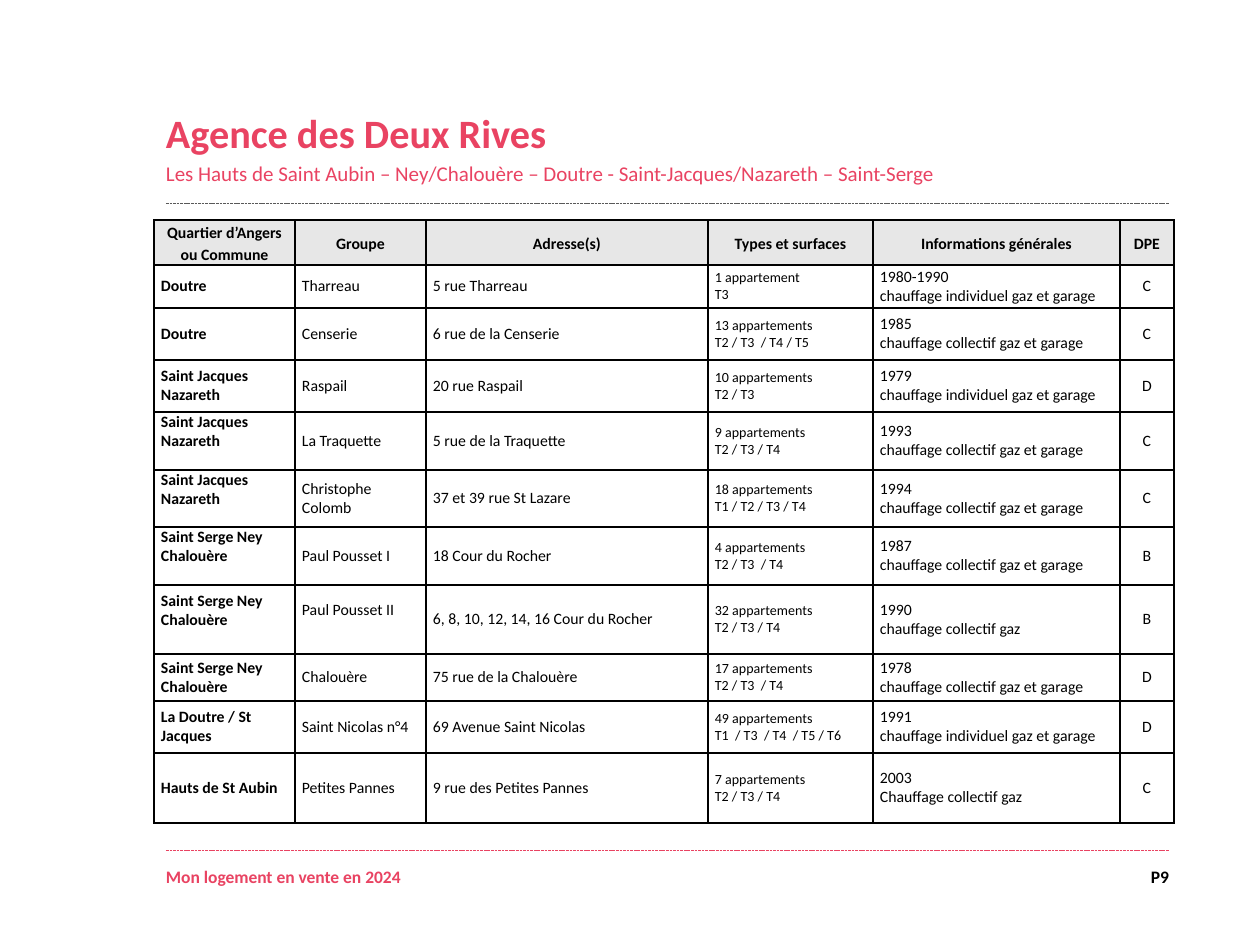
import dataclasses

import lxml.etree
import pptx
import pptx.dml.color
import pptx.enum.dml
import pptx.enum.text
import pptx.oxml.ns
import pptx.util

PX = 914400 // 126
ALIGN = pptx.enum.text.PP_ALIGN
ANCHOR = pptx.enum.text.MSO_ANCHOR


@dataclasses.dataclass(frozen=True)
class Theme:
    font: str = "Calibri"
    accent: str = "E94362"
    ink: str = "000000"
    rule: str = "595959"
    header_fill: str = "E7E7E7"
    title: int = 23
    subtitle: int = 12
    footer: int = 10
    cell: int = 9
    small: int = 8


THEME = Theme()
LEFT, RIGHT = 166, 1169
COLUMN_WIDTHS = [141, 131, 282, 165, 247, 54]
ROW_HEIGHTS = [45, 43, 52, 52, 58, 57, 58, 69, 47, 52, 70]
HEADER = ["Quartier d’Angers ou Commune", "Groupe", "Adresse(s)",
          "Types et surfaces", "Informations générales", "DPE"]
INDIVIDUAL = "chauffage individuel gaz et garage"
COLLECTIVE = "chauffage collectif gaz et garage"
HOMES = [
    ["Doutre", "Tharreau", "5 rue Tharreau",
     "1 appartement\nT3", f"1980-1990\n{INDIVIDUAL}", "C"],
    ["Doutre", "Censerie", "6 rue de la Censerie",
     "13 appartements\nT2 / T3  / T4 / T5", f"1985\n{COLLECTIVE}", "C"],
    ["Saint Jacques Nazareth", "Raspail", "20 rue Raspail",
     "10 appartements\nT2 / T3", f"1979\n{INDIVIDUAL}", "D"],
    ["Saint Jacques Nazareth", "La Traquette", "5 rue de la Traquette",
     "9 appartements\nT2 / T3 / T4", f"1993\n{COLLECTIVE}", "C"],
    ["Saint Jacques Nazareth", "Christophe Colomb", "37 et 39 rue St Lazare",
     "18 appartements\nT1 / T2 / T3 / T4", f"1994\n{COLLECTIVE}", "C"],
    ["Saint Serge Ney Chalouère", "Paul Pousset I", "18 Cour du Rocher",
     "4 appartements\nT2 / T3  / T4", f"1987\n{COLLECTIVE}", "B"],
    ["Saint Serge Ney Chalouère", "Paul Pousset II", "6, 8, 10, 12, 14, 16 Cour du Rocher",
     "32 appartements\nT2 / T3 / T4", "1990\nchauffage collectif gaz", "B"],
    ["Saint Serge Ney Chalouère", "Chalouère", "75 rue de la Chalouère",
     "17 appartements\nT2 / T3  / T4", f"1978\n{COLLECTIVE}", "D"],
    ["La Doutre / St Jacques", "Saint Nicolas n°4", "69 Avenue Saint Nicolas",
     "49 appartements\nT1  / T3  / T4  / T5 / T6", f"1991\n{INDIVIDUAL}", "D"],
    ["Hauts de St Aubin", "Petites Pannes", "9 rue des Petites Pannes",
     "7 appartements\nT2 / T3 / T4", "2003\nChauffage collectif gaz", "C"],
]
# Cells (row, column) whose text sits half a line above the middle.
RAISED = {(4, 0), (5, 0), (6, 0), (7, 0), (7, 1)}


def rgb(colour):
    return pptx.dml.color.RGBColor.from_string(colour)


class Page:
    def __init__(self, slide, theme):
        self.slide = slide
        self.theme = theme

    def style(self, para, size, colour, bold=False, align=ALIGN.LEFT):
        para.alignment = align
        para.font.name = self.theme.font
        para.font.size = pptx.util.Pt(size)
        para.font.bold = bold
        para.font.color.rgb = rgb(colour)

    def frame(self, box, anchor):
        """Give a box plain wrapping text without margins."""
        frame = box.text_frame
        frame.word_wrap = True
        frame.auto_size = pptx.enum.text.MSO_AUTO_SIZE.NONE
        frame.vertical_anchor = anchor
        frame.margin_left = frame.margin_right = 0
        frame.margin_top = frame.margin_bottom = 0
        return frame

    def heading(self, title, subtitle, left, top, width, height):
        box = self.slide.shapes.title
        box.left, box.top = left * PX, top * PX
        box.width, box.height = width * PX, height * PX
        frame = self.frame(box, ANCHOR.BOTTOM)
        frame.text = f"{title}\n{subtitle}"
        first, second = frame.paragraphs
        self.style(first, self.theme.title, self.theme.accent, bold=True)
        self.style(second, self.theme.subtitle, self.theme.accent)
        first.space_before = pptx.util.Pt(0)
        second.space_before = pptx.util.Pt(0.2 * self.theme.subtitle)

    def footer(self, text, left, width, colour, align):
        box = self.slide.shapes.add_textbox(left * PX, 866 * PX, width * PX, 25 * PX)
        frame = self.frame(box, ANCHOR.TOP)
        frame.text = text
        self.style(frame.paragraphs[0], self.theme.footer, colour, True, align)

    def rule(self, y, colour):
        line = self.slide.shapes.add_connector(
            pptx.enum.shapes.MSO_CONNECTOR.STRAIGHT, LEFT * PX, y * PX, RIGHT * PX, y * PX)
        line.line.color.rgb = rgb(colour)
        line.line.width = pptx.util.Pt(0.5)
        line.line.dash_style = pptx.enum.dml.MSO_LINE.SQUARE_DOT
        lxml.etree.SubElement(line._element.spPr, pptx.oxml.ns.qn("a:effectLst"))

    def borders(self, cell):
        properties = cell._tc.get_or_add_tcPr()
        for side in ("a:lnL", "a:lnR", "a:lnT", "a:lnB"):
            edge = lxml.etree.SubElement(
                properties, pptx.oxml.ns.qn(side), w=str(pptx.util.Pt(1)))
            fill = lxml.etree.SubElement(edge, pptx.oxml.ns.qn("a:solidFill"))
            lxml.etree.SubElement(fill, pptx.oxml.ns.qn("a:srgbClr"), val=self.theme.ink)

    def cell(self, cell, text, row, column):
        header = row == 0
        self.borders(cell)
        if header:
            cell.fill.solid()
            cell.fill.fore_color.rgb = rgb(self.theme.header_fill)
        else:
            cell.fill.background()
        cell.vertical_anchor = ANCHOR.MIDDLE
        cell.margin_left = cell.margin_right = 7 * PX
        cell.margin_top = 0
        cell.margin_bottom = 18 * PX if (row, column) in RAISED else 0
        cell.text = text
        small = column == 3 and not header
        centred = header or column == 5
        for para in cell.text_frame.paragraphs:
            self.style(para, self.theme.small if small else self.theme.cell, self.theme.ink,
                       header or column == 0, ALIGN.CENTER if centred else ALIGN.LEFT)
            if header:
                para.line_spacing = 1.15

    def table(self, rows, left, top, widths, heights):
        table = self.slide.shapes.add_table(
            len(rows), len(widths), left * PX, top * PX,
            sum(widths) * PX, sum(heights) * PX).table
        table.first_row = table.horz_banding = False
        for column, width in zip(table.columns, widths):
            column.width = width * PX
        for row, height in zip(table.rows, heights):
            row.height = height * PX
        for row, texts in enumerate(rows):
            for column, text in enumerate(texts):
                self.cell(table.cell(row, column), text, row, column)


def main():
    deck = pptx.Presentation()
    deck.slide_width, deck.slide_height = pptx.util.Inches(10), pptx.util.Inches(7.5)
    page = Page(deck.slides.add_slide(deck.slide_layouts[5]), THEME)
    page.rule(203, THEME.rule)
    page.rule(850, THEME.accent)
    page.heading(
        "Agence des Deux Rives",
        "Les Hauts de Saint Aubin – Ney/Chalouère – Doutre - Saint-Jacques/Nazareth – Saint-Serge",
        LEFT, 92, 786, 94)
    page.table([HEADER] + HOMES, 154, 220, COLUMN_WIDTHS, ROW_HEIGHTS)
    page.footer("Mon logement en vente en 2024", LEFT, 960, THEME.accent, ALIGN.LEFT)
    page.footer("P9", 1126, RIGHT - 1126, THEME.ink, ALIGN.RIGHT)
    deck.save("out.pptx")


if __name__ == "__main__":
    main()
